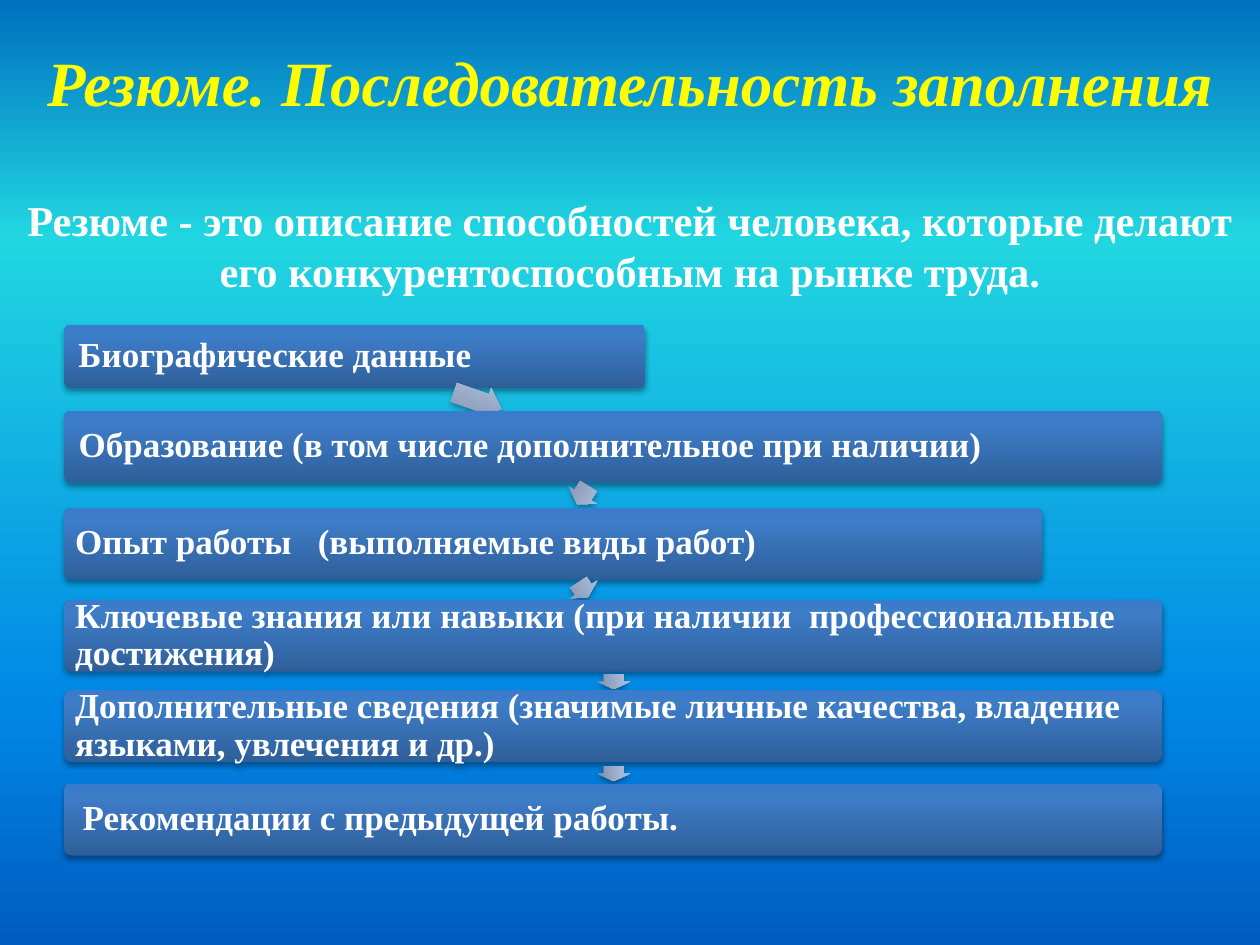
from lxml import etree
from pptx import Presentation
from pptx.dml.color import RGBColor
from pptx.enum import shapes, text
from pptx.oxml import ns
from pptx.util import Inches, Pt

WHITE = RGBColor(0xFF, 0xFF, 0xFF)
YELLOW = RGBColor(0xFF, 0xFF, 0x00)
BLACK = RGBColor(0, 0, 0)


def stops(*pairs):
    return [(position, RGBColor.from_string(color)) for position, color in pairs]


BACKGROUND = stops((0, "0070C0"), (25, "21D6E0"), (75, "0087E6"), (100, "005CBF"))
STEP_FILL = stops((0, "2F5F99"), (80, "3D7CC7"), (100, "3A7CCB"))
ARROW_FILL = stops((0, "818FA8"), (80, "A7B9DA"), (100, "A7BADC"))


def set_gradient(owner, fill, gradient, angle):
    fill.gradient()
    fill.gradient_angle = angle
    stop_list = owner.element.find(".//" + ns.qn("a:gsLst"))
    for old_stop in list(stop_list):
        stop_list.remove(old_stop)
    for position, color in gradient:
        stop = etree.SubElement(stop_list, ns.qn("a:gs"), pos=str(position * 1000))
        etree.SubElement(stop, ns.qn("a:srgbClr"), val=str(color))


presentation = Presentation()
presentation.slide_width, presentation.slide_height = Inches(10), Inches(7.5)
slide = presentation.slides.add_slide(presentation.slide_layouts[5])
set_gradient(slide, slide.background.fill, BACKGROUND, 270)

# Title with the definition below it
title = slide.shapes.title
title.left, title.top = Inches(0), Inches(0.76)
title.width, title.height = Inches(10), Inches(0.79)
frame_format = {
    "auto_size": text.MSO_AUTO_SIZE.NONE,
    "word_wrap": True,
    "vertical_anchor": text.MSO_ANCHOR.MIDDLE,
    "margin_top": Inches(0.38),
    "margin_bottom": Inches(0),
}
for name, value in frame_format.items():
    setattr(title.text_frame, name, value)

heading = "Резюме. Последовательность заполнения"
definition = ("Резюме -\u00a0это описание способностей человека, которые делают "
              "его конкурентоспособным на рынке труда.")
title.text_frame.text = heading + "\n" + definition
title_formats = [
    {"size": Pt(36), "italic": True, "color": YELLOW, "space": 0},
    {"size": Pt(24.3), "italic": False, "color": WHITE, "space": 43},
]
for paragraph, style in zip(title.text_frame.paragraphs, title_formats):
    paragraph.alignment = text.PP_ALIGN.CENTER
    paragraph.space_before = Pt(style["space"])
    font = paragraph.runs[0].font
    font.name, font.bold = "Times New Roman", True
    font.size, font.italic = style["size"], style["italic"]
    font.color.rgb = style["color"]

# Steps: top, width, height, left margin, wording
steps = [
    (2.58, 4.61, 0.5, 0.1, "Биографические данные"),
    (3.26, 8.71, 0.57, 0.1, "Образование (в том числе дополнительное при наличии)"),
    (4.03, 7.76, 0.57, 0.07, "Опыт работы   (выполняемые виды работ)"),
    (4.76, 8.71, 0.57, 0.07,
     "Ключевые знания или навыки (при наличии  профессиональные достижения)"),
    (5.48, 8.71, 0.57, 0.07,
     "Дополнительные сведения (значимые личные качества, владение языками, "
     "увлечения и др.)"),
    (6.22, 8.71, 0.57, 0.13, "Рекомендации с предыдущей работы."),
]
# Arrow after each step but the last: left, top, width, rotation
arrows = [
    (3.59, 3.05, 0.4, 19.2),
    (4.54, 3.8, 0.17, 121.8),
    (4.56, 4.55, 0.14, 56.8),
    (4.81, 5.28, 0.12, 90),
    (4.81, 6.01, 0.12, 90),
]
step_font = {"name": "Times New Roman", "size": Pt(20), "bold": True}
pieces = []

for index, (top, width, height, margin, wording) in enumerate(steps):
    step = slide.shapes.add_shape(
        shapes.MSO_SHAPE.ROUNDED_RECTANGLE,
        Inches(0.51), Inches(top), Inches(width), Inches(height))
    step.adjustments[0] = 0.1
    pieces.append((step, STEP_FILL))

    frame = step.text_frame
    step_format = {
        "word_wrap": True,
        "vertical_anchor": text.MSO_ANCHOR.MIDDLE,
        "margin_left": Inches(margin),
        "margin_right": Inches(0.07),
        "margin_top": Inches(0.07),
        "margin_bottom": Inches(0.07),
    }
    for name, value in step_format.items():
        setattr(frame, name, value)
    frame.text = wording
    paragraph = frame.paragraphs[0]
    paragraph.alignment = text.PP_ALIGN.LEFT
    paragraph.line_spacing = 0.9
    font = paragraph.runs[0].font
    for name, value in step_font.items():
        setattr(font, name, value)
    font.color.rgb = WHITE

    if index < len(arrows):
        left, arrow_top, arrow_width, rotation = arrows[index]
        arrow = slide.shapes.add_shape(
            shapes.MSO_SHAPE.RIGHT_ARROW,
            Inches(left), Inches(arrow_top), Inches(arrow_width), Inches(0.26))
        arrow.adjustments[0], arrow.adjustments[1] = 0.6, 0.5
        arrow.rotation = rotation
        pieces.append((arrow, ARROW_FILL))

# Gradient and soft shadow on every step and arrow
for shape, gradient in pieces:
    set_gradient(shape, shape.fill, gradient, 90)
    shape.line.fill.background()
    shape.shadow.inherit = False
    effects = shape.element.find(".//" + ns.qn("a:effectLst"))
    shadow = etree.SubElement(
        effects, ns.qn("a:outerShdw"), blurRad=str(Pt(3.1)), dist=str(Pt(1.8)),
        dir="5400000", rotWithShape="0")
    shadow_color = etree.SubElement(shadow, ns.qn("a:srgbClr"), val=str(BLACK))
    etree.SubElement(shadow_color, ns.qn("a:alpha"), val="35000")

presentation.save("out.pptx")
